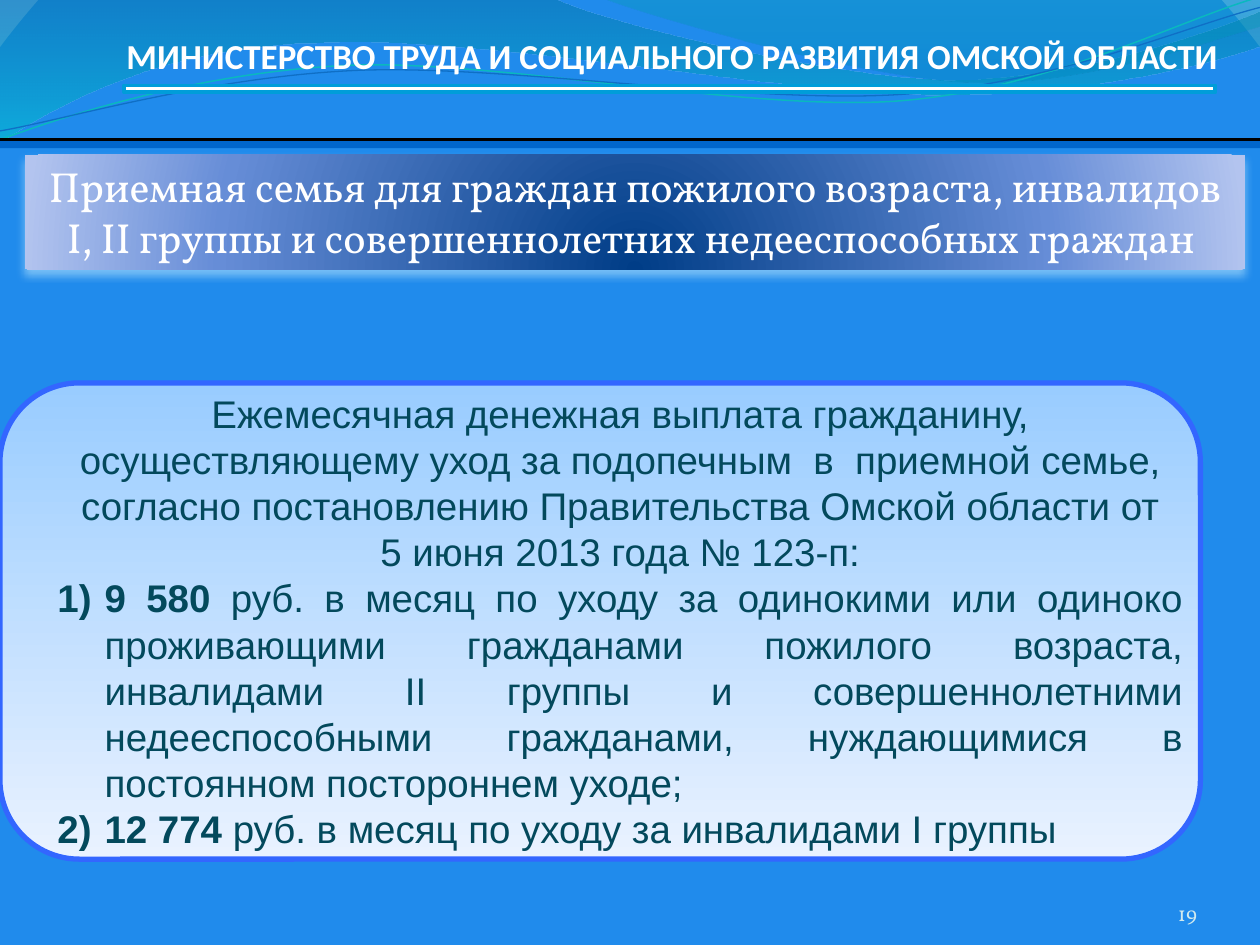
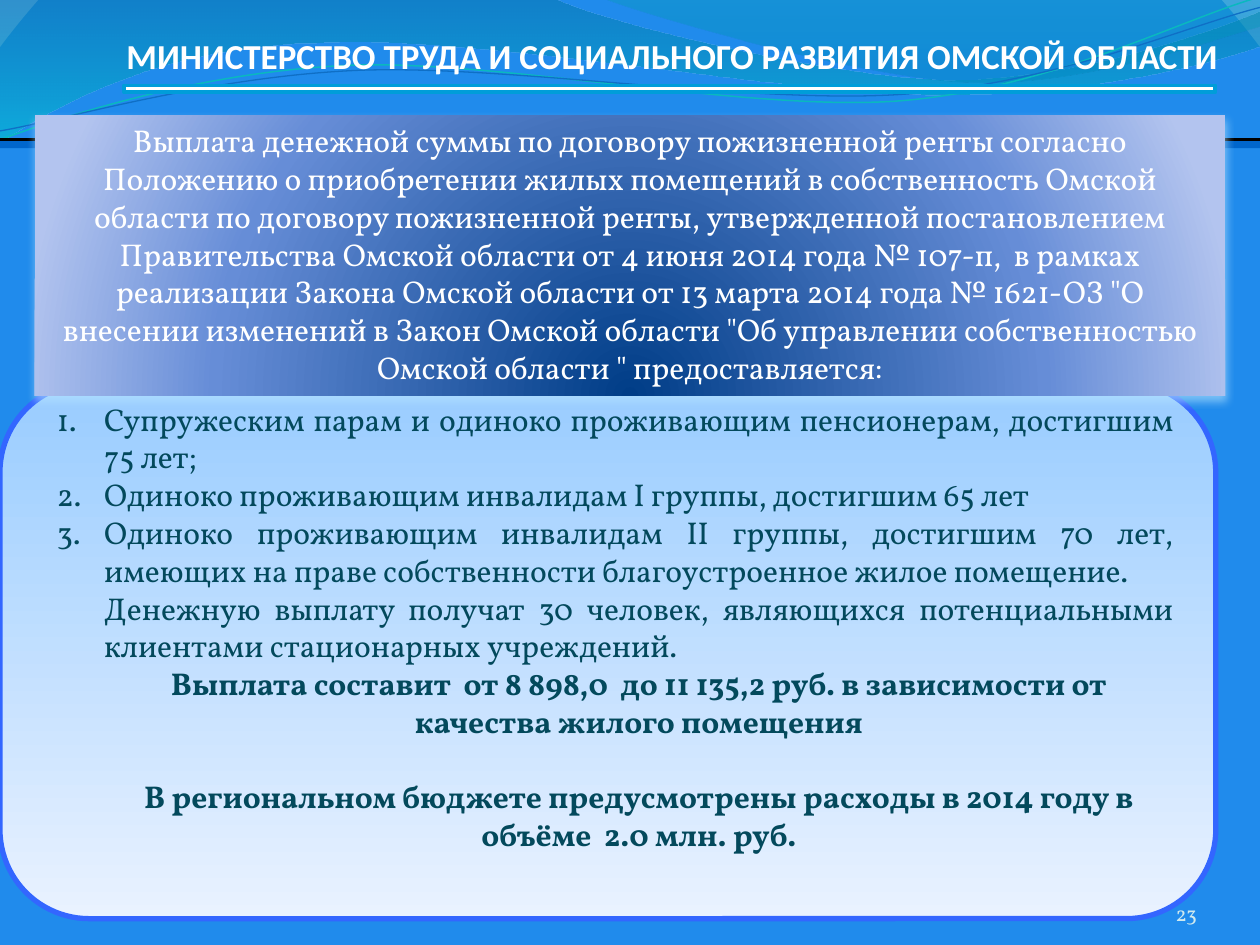
from lxml import etree
from pptx import Presentation
from pptx.dml.color import RGBColor
from pptx.enum.shapes import MSO_CONNECTOR, MSO_SHAPE
from pptx.enum.text import MSO_ANCHOR, PP_ALIGN
from pptx.oxml.ns import qn
from pptx.util import Cm, Pt

RECT = MSO_SHAPE.RECTANGLE
ROUNDED = MSO_SHAPE.ROUNDED_RECTANGLE
STRAIGHT = MSO_CONNECTOR.STRAIGHT
TOP, MIDDLE, BOTTOM = MSO_ANCHOR.TOP, MSO_ANCHOR.MIDDLE, MSO_ANCHOR.BOTTOM
LEFT, CENTER = PP_ALIGN.LEFT, PP_ALIGN.CENTER
RIGHT, JUSTIFY = PP_ALIGN.RIGHT, PP_ALIGN.JUSTIFY

COLORS = {
    "sky": "208BEC", "sky_edge": "59AAF2",
    "wave_deep": "0074A1", "wave_teal": "00C6CF",
    "crest_teal": "00A1A9", "crest_blue": "008BBF",
    "thread_teal": "0AB8BF", "thread_blue": "0F6FC6",
    "white": "FFFFFF", "underline": "009DD9",
    "panel_top": "99CCFF", "panel_bottom": "E9F2FF", "panel_edge": "3366FF",
    "strip": "0066CC", "black": "000000",
    "banner_core": "003D87", "banner_mid": "668DD7", "banner_edge": "B3C4EF",
    "halo": "B4E4FF", "body": "03495C", "number": "D1EAEE",
}
SLIDE_W, SLIDE_H = 25.4, 19.05
HEADER_BOX = (0, 0, SLIDE_W, 2.81)
RULE_BOX = (0, 2.81, SLIDE_W, 0.18)
NUMBER_BOX = (22.02, 17.65, 2.11, 1.02)
HANGING = 0.95
THREAD_TURN = 357.3
MINISTRY = "МИНИСТЕРСТВО ТРУДА И СОЦИАЛЬНОГО РАЗВИТИЯ ОМСКОЙ ОБЛАСТИ"

WAVE = [
    (0, -0.03), (11.18, -0.03),
    (12.09, 0.43, 16.87, 1.6, 19.25, 1.6),
    (21.67, 1.6, 24.33, 0.66, 25.4, 0.23), (25.43, 0.91),
    (24.97, 1.12, 22.1, 1.93, 18.95, 1.91),
    (15.8, 1.91, 9.7, 0.71, 6.53, 0.86),
    (3.28, 0.89, 1.17, 2.11, -0.03, 2.87),
]
CREST = [
    (12.17, -0.03),
    (12.93, 0.28, 17.32, 1.57, 19.53, 1.65),
    (21.74, 1.75, 24.41, 0.81, 25.4, 0.53), (25.4, 0),
]
TEAL_THREAD = [
    (-0.05, 2.22),
    (1.19, 1.82, 4.02, 1.04, 7.05, 1.05),
    (10.05, 1.07, 15.02, 2.37, 18.08, 2.29),
    (21.13, 2.2, 23.86, 0.91, 25.41, 0.55),
]
BLUE_THREAD = [
    (-0.04, 2.04),
    (1.16, 1.9, 4.17, 1.15, 7.2, 1.16),
    (10.25, 1.18, 15.13, 2.23, 18.19, 2.16),
    (21.22, 2.1, 23.93, 1.06, 25.45, 0.75),
]

PAGES = [
    {
        "number": "19",
        "panel": (0, 7.72, 24.2, 9.6),
        "banner": (0.5, 3.12, 24.6, 2.31),
        "banner_size": 24,
        "banner_text": "Приемная семья для граждан пожилого возраста, инвалидов "
                       "I, II группы и совершеннолетних недееспособных граждан ",
        "body": (0.91, 7.73, 23.19, 9.65),
        "font": {"name": "Arial", "size": Pt(22)},
        "numbering": "arabicParenR",
        "paragraphs": [
            ("center", [("Ежемесячная денежная выплата гражданину, осуществляющему "
                         "уход за подопечным  в  приемной семье, согласно "
                         "постановлению Правительства Омской области от", False),
                        ("\n", False),
                        ("5 июня 2013 года № 123-п:", False)]),
            ("item", [("9 580", True),
                      (" руб. в месяц по уходу за одинокими или одиноко "
                       "проживающими гражданами пожилого возраста, инвалидами "
                       "II группы и совершеннолетними недееспособными "
                       "гражданами, нуждающимися в постоянном постороннем "
                       "уходе;", False)]),
            ("item", [("12 774", True),
                      (" руб. в месяц по уходу за инвалидами I группы", False)]),
        ],
    },
    {
        "number": "23",
        "panel": (0, 7.72, 24.51, 10.8),
        "banner": (0.7, 2.32, 24, 5.65),
        "banner_size": 18,
        "banner_text": "Выплата денежной суммы по договору пожизненной ренты "
                       "согласно Положению о приобретении жилых помещений в "
                       "собственность Омской области по договору пожизненной "
                       "ренты, утвержденной постановлением Правительства Омской "
                       "области от 4 июня 2014 года № 107-п,  в рамках реализации "
                       "Закона Омской области от 13 марта 2014 года № 1621-ОЗ "
                       '"О внесении изменений в Закон Омской области "Об '
                       'управлении собственностью Омской области " предоставляется:',
        "body": (0.9, 7.93, 23.01, 11.02),
        "font": {"name": "Vollkorn", "size": Pt(18)},
        "numbering": "arabicPeriod",
        "paragraphs": [
            ("item", [("Супружеским парам и одиноко проживающим пенсионерам, "
                       "достигшим 75 лет;", False)]),
            ("item", [("Одиноко проживающим инвалидам I группы, достигшим 65 лет",
                       False)]),
            ("item", [("Одиноко проживающим инвалидам II группы, достигшим 70 лет, "
                       "имеющих на праве собственности благоустроенное жилое "
                       "помещение.", False)]),
            ("indented", [("Денежную выплату получат 30 человек, являющихся "
                           "потенциальными клиентами стационарных учреждений.",
                           False)]),
            ("total", [("Выплата составит  от 8 898,0  до 11 135,2 руб. в "
                        "зависимости от качества жилого помещения", True)]),
            ("budget", [("В региональном бюджете предусмотрены расходы в 2014 году "
                         "в объёме  2.0 млн. руб.", True)]),
        ],
    },
]
PARAGRAPH_FORMATS = {
    "center": {"alignment": CENTER},
    "total": {"alignment": CENTER},
    "budget": {"alignment": CENTER, "space_before": Pt(21.5)},
    "item": {"alignment": JUSTIFY},
    "indented": {"alignment": JUSTIFY},
}


def rgb(name):
    return RGBColor.from_string(COLORS[name])


def apply(target, formats):
    for key, value in formats.items():
        setattr(target, key, value)


def add_color(parent, name, opacity=100):
    color = etree.SubElement(parent, qn("a:srgbClr"), val=COLORS[name])
    if opacity < 100:
        etree.SubElement(color, qn("a:alpha"), val=str(opacity * 1000))


def set_gradient(owner, fill, stops, focus=None):
    fill.solid()
    solid = next(owner.element.iter(qn("a:solidFill")))
    gradient = etree.Element(qn("a:gradFill"), rotWithShape="1")
    stop_list = etree.SubElement(gradient, qn("a:gsLst"))
    for position, name, opacity in stops:
        stop = etree.SubElement(stop_list, qn("a:gs"), pos=str(position * 1000))
        add_color(stop, name, opacity)
    if focus:
        course = etree.SubElement(gradient, qn("a:path"), path="circle")
        edges = {side: str(value * 1000) for side, value in zip("ltrb", focus)}
        etree.SubElement(course, qn("a:fillToRect"), **edges)
    else:
        etree.SubElement(gradient, qn("a:lin"), ang="5400000", scaled="0")
    solid.getparent().replace(solid, gradient)


def set_line(shape, name=None, width=0):
    if name:
        shape.line.color.rgb = rgb(name)
        shape.line.width = Pt(width)
    else:
        shape.line.fill.background()


def add_block(slide, kind, box, fill=None, edge=None, width=0):
    block = slide.shapes.add_shape(kind, *map(Cm, box))
    block.shadow.inherit = False
    if fill:
        block.fill.solid()
        block.fill.fore_color.rgb = rgb(fill)
    set_line(block, edge, width)
    return block


def add_outline(slide, outline, x, y, closed):
    points = [(Cm(x + piece[i]), Cm(y + piece[i + 1]))
              for piece in outline for i in range(0, len(piece), 2)]
    builder = slide.shapes.build_freeform(*points[0])
    builder.add_line_segments(points[1:], close=closed)
    shape = builder.convert_to_shape()
    shape.shadow.inherit = False
    segments = iter(list(shape.element.iter(qn("a:lnTo"))))
    for piece in outline[1:]:
        segment = next(segments)
        if len(piece) == 6:
            curve = etree.Element(qn("a:cubicBezTo"))
            segment.addprevious(curve)
            for part in (segment, next(segments), next(segments)):
                curve.append(part[0])
                part.getparent().remove(part)
    return shape


def write_runs(paragraph, runs, formats, color):
    for text, bold in runs:
        if text == "\n":
            paragraph.add_line_break()
            continue
        run = paragraph.add_run()
        run.text = text
        apply(run.font, {**formats, "bold": bold})
        run.font.color.rgb = rgb(color)


def add_text(slide, box, text, formats, color, align, frame_formats, bold=False):
    frame = slide.shapes.add_textbox(*map(Cm, box)).text_frame
    apply(frame, frame_formats)
    frame.paragraphs[0].alignment = align
    write_runs(frame.paragraphs[0], [(text, bold)], formats, color)


def add_header(slide, box):
    x, y, w, h = box
    for outline, stops in (
            (WAVE, [(0, "wave_deep", 45), (100, "wave_teal", 55)]),
            (CREST, [(0, "crest_teal", 30), (80, "crest_blue", 45)])):
        wave = add_outline(slide, outline, x, y, True)
        set_gradient(wave, wave.fill, stops)
        set_line(wave)
    for outline, color, width in ((TEAL_THREAD, "thread_teal", 0.85),
                                  (BLUE_THREAD, "thread_blue", 0.75)):
        thread = add_outline(slide, outline, x, y, False)
        thread.rotation = THREAD_TURN
        thread.fill.background()
        set_line(thread, color, width)
    add_text(slide, (x + 2.3, y + 0.53, w - 2.8, 1.19), MINISTRY,
             {"name": "Calibri", "size": Pt(20)}, "white", LEFT,
             {"word_wrap": False, "vertical_anchor": MIDDLE}, bold=True)
    add_block(slide, RECT, (x + 2.5, y + 1.72, w - 3.4, 0.14), "white", "underline", 2)


def add_panel(slide, box):
    panel = add_block(slide, ROUNDED, box, edge="panel_edge", width=3)
    set_gradient(panel, panel.fill, [(0, "panel_top", 100), (100, "panel_bottom", 100)])


def add_rule(slide, box):
    x, y, w, h = box
    add_block(slide, RECT, box, "strip")
    rule = slide.shapes.add_connector(STRAIGHT, Cm(x), Cm(y), Cm(x + w), Cm(y))
    set_line(rule, "black", 1.5)
    etree.SubElement(rule.element.spPr, qn("a:effectLst"))


def add_banner(slide, box, text, size):
    banner = add_block(slide, RECT, box)
    set_gradient(banner, banner.fill,
                 [(0, "banner_core", 100), (68, "banner_mid", 100),
                  (100, "banner_edge", 100)], (50, 130, 50, -30))
    effects = banner.element.spPr.find(qn("a:effectLst"))
    halo = etree.SubElement(effects, qn("a:outerShdw"), blurRad=str(Pt(4.5)),
                            dist=str(Pt(3)), dir="5400000", rotWithShape="0")
    add_color(halo, "halo", 60)
    frame = banner.text_frame
    apply(frame, {"word_wrap": True, "vertical_anchor": TOP})
    frame.paragraphs[0].alignment = CENTER
    write_runs(frame.paragraphs[0], [(text, False)],
               {"name": "Vollkorn", "size": Pt(size)}, "white")


def add_body(slide, box, paragraphs, formats, numbering):
    frame = slide.shapes.add_textbox(*map(Cm, box)).text_frame
    frame.word_wrap = True
    for index, (role, runs) in enumerate(paragraphs):
        paragraph = frame.add_paragraph() if index else frame.paragraphs[0]
        apply(paragraph, PARAGRAPH_FORMATS[role])
        properties = paragraph._p.get_or_add_pPr()
        if role != "center":
            properties.set("marL", str(Cm(HANGING)))
        if role == "item":
            properties.set("indent", str(-Cm(HANGING)))
            etree.SubElement(properties, qn("a:buAutoNum"), type=numbering)
        write_runs(paragraph, runs, formats, "body")


def add_number(slide, box, number):
    margins = {f"margin_{side}": 0 for side in ("left", "top", "right", "bottom")}
    add_text(slide, box, number, {"name": "Vollkorn", "size": Pt(12)}, "number", RIGHT,
             {"word_wrap": True, "vertical_anchor": BOTTOM, **margins})


def add_page(deck, page):
    slide = deck.slides.add_slide(deck.slide_layouts[6])
    set_gradient(slide, slide.background.fill,
                 [(100, "sky", 100), (100, "sky_edge", 100)], (10, 110, 10, 100))
    add_header(slide, HEADER_BOX)
    add_panel(slide, page["panel"])
    add_rule(slide, RULE_BOX)
    add_body(slide, page["body"], page["paragraphs"], page["font"], page["numbering"])
    add_number(slide, NUMBER_BOX, page["number"])
    add_banner(slide, page["banner"], page["banner_text"], page["banner_size"])


def main():
    deck = Presentation()
    apply(deck, {"slide_width": Cm(SLIDE_W), "slide_height": Cm(SLIDE_H)})
    for page in PAGES:
        add_page(deck, page)
    deck.save("out.pptx")


if __name__ == "__main__":
    main()
